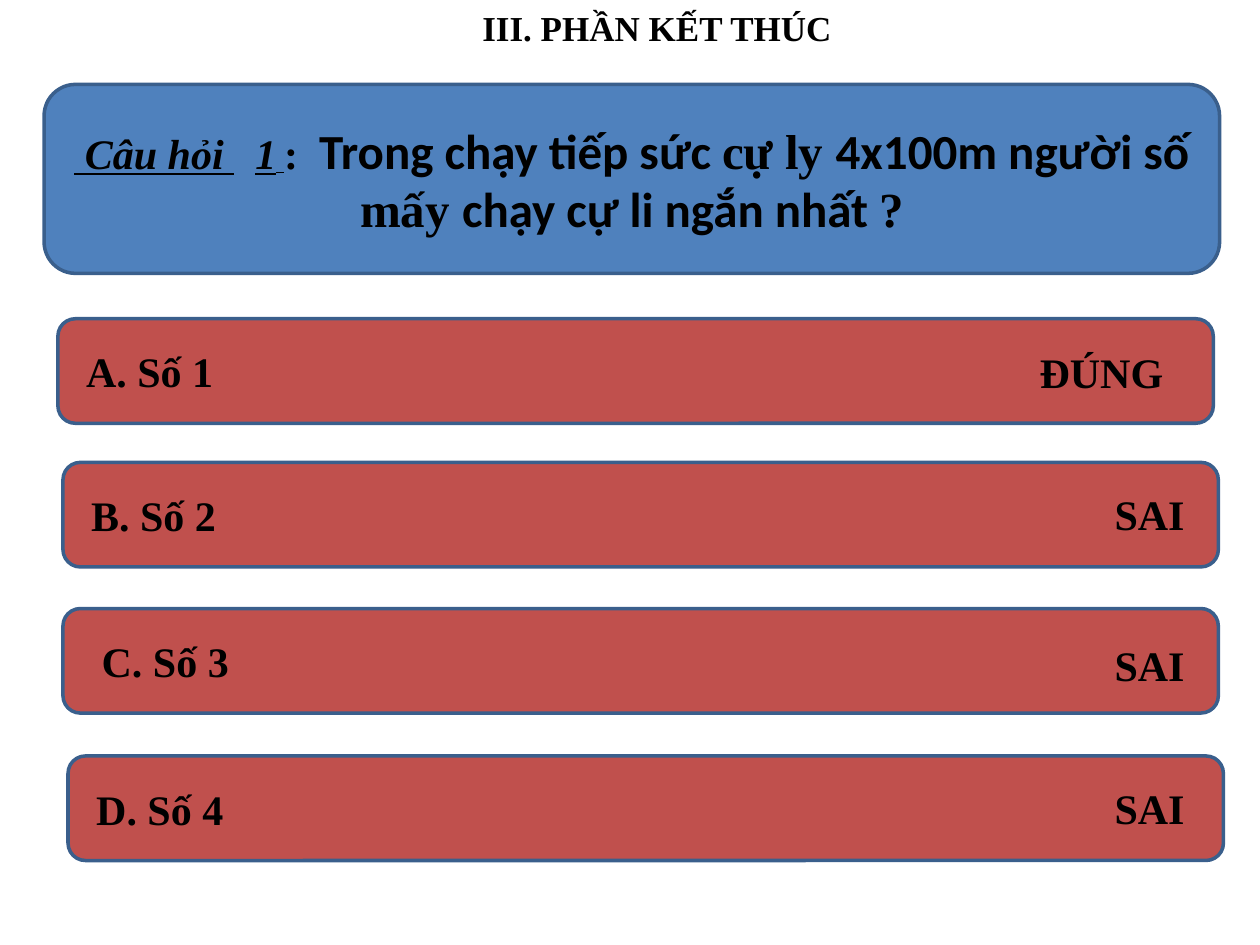
from dataclasses import dataclass

from pptx import Presentation
from pptx.dml.color import RGBColor
from pptx.enum.shapes import MSO_SHAPE as Shape
from pptx.enum.text import MSO_ANCHOR as Anchor, MSO_AUTO_SIZE as AutoSize, PP_ALIGN as Align
from pptx.util import Inches, Pt


@dataclass(frozen=True)
class Theme:
    ink: str = "000000"
    question: str = "4F81BD"
    answer: str = "C0504D"
    outline: str = "3A5F8C"
    paper: str = "FFFFFF"
    serif: str = "Times New Roman"
    sans: str = "Calibri"
    title: int = 20
    label: int = 24
    body: int = 28
    small: int = 18
    line: int = 2


THEME = Theme()
WIDTH, HEIGHT = 10, 7.5
ROW_WIDTH, ROW_HEIGHT = 9.17, 0.83
VERDICT_WIDTH, VERDICT_HEIGHT = 1.33, 0.5

# Answer, row left and top, text indent in points, verdict, verdict offset in the row
ANSWERS = [
    ("A. Số 1", 0.46, 2.53, 6, "ĐÚNG", (7.54, 0.17)),
    ("B. Số 2", 0.5, 3.67, 6, "SAI", (7.67, 0.16)),
    ("C. Số 3", 0.5, 4.83, 12, "SAI", (7.67, 0.2)),
    ("D. Số 4", 0.54, 6, 6, "SAI", (7.63, 0.16)),
]


def add_span(para, text, size=THEME.label, font=THEME.serif, italic=False,
             underline=False, tracking=0):
    """Append bold text; tracking is extra width per character, in points."""
    span = para.add_run()
    span.text = text
    span.font.size = Pt(size)
    span.font.name = font
    span.font.bold = True
    span.font.italic = italic
    span.font.underline = underline
    span.font.color.rgb = RGBColor.from_string(THEME.ink)
    if tracking:
        span.font._element.set("spc", str(tracking * 100))


def add_panel(page, box, fill):
    panel = page.shapes.add_shape(Shape.ROUNDED_RECTANGLE, *map(Inches, box))
    panel.shadow.inherit = False
    panel.fill.solid()
    panel.fill.fore_color.rgb = RGBColor.from_string(fill)
    panel.line.color.rgb = RGBColor.from_string(THEME.outline)
    panel.line.width = Pt(THEME.line)
    panel.text_frame.word_wrap = True
    panel.text_frame.vertical_anchor = Anchor.MIDDLE
    return panel.text_frame


def place_title(page, box, text):
    title = page.shapes.title
    title.left, title.top, title.width, title.height = map(Inches, box)
    frame = title.text_frame
    frame.word_wrap = True
    frame.auto_size = AutoSize.SHAPE_TO_FIT_TEXT
    frame.vertical_anchor = Anchor.TOP
    para = frame.paragraphs[0]
    para.alignment = Align.CENTER
    add_span(para, text, size=THEME.title)


def add_question(page, box):
    para = add_panel(page, box, THEME.question).paragraphs[0]
    para.alignment = Align.CENTER
    lead = dict(italic=True, underline=True)
    add_span(para, " Câu hỏi", **lead)
    add_span(para, " ", tracking=12, **lead)
    add_span(para, "1", **lead)
    add_span(para, " ", size=THEME.small, **lead)
    add_span(para, ":")
    add_span(para, " ", tracking=6)
    wording = ["Trong chạy tiếp sức ", "cự ly ", "4x100m người số ",
               "mấy ", "chạy cự li ngắn nhất ", "?"]
    for index, text in enumerate(wording):
        font = THEME.serif if index % 2 else THEME.sans
        add_span(para, text, size=THEME.body, font=font)


def add_answer(page, box, text, indent):
    frame = add_panel(page, box, THEME.answer)
    frame.margin_left = Inches(0.1) + Pt(indent)
    para = frame.paragraphs[0]
    para.alignment = Align.LEFT
    add_span(para, text)


def add_verdict(page, box, text):
    frame = page.shapes.add_textbox(*map(Inches, box)).text_frame
    frame.word_wrap = True
    frame.auto_size = AutoSize.SHAPE_TO_FIT_TEXT
    para = frame.paragraphs[0]
    para.alignment = Align.RIGHT
    add_span(para, text)


def main():
    deck = Presentation()
    deck.slide_width, deck.slide_height = Inches(WIDTH), Inches(HEIGHT)
    page = deck.slides.add_slide(deck.slide_layouts[5])
    page.background.fill.solid()
    page.background.fill.fore_color.rgb = RGBColor.from_string(THEME.paper)

    place_title(page, (0.83, 0, 8.77, 0.44), "III. PHẦN KẾT THÚC")
    add_question(page, (0.35, 0.67, 9.33, 1.5))
    for text, left, top, indent, verdict, (across, down) in ANSWERS:
        add_answer(page, (left, top, ROW_WIDTH, ROW_HEIGHT), text, indent)
        add_verdict(page, (left + across, top + down, VERDICT_WIDTH, VERDICT_HEIGHT), verdict)
    deck.save("out.pptx")


if __name__ == "__main__":
    main()
